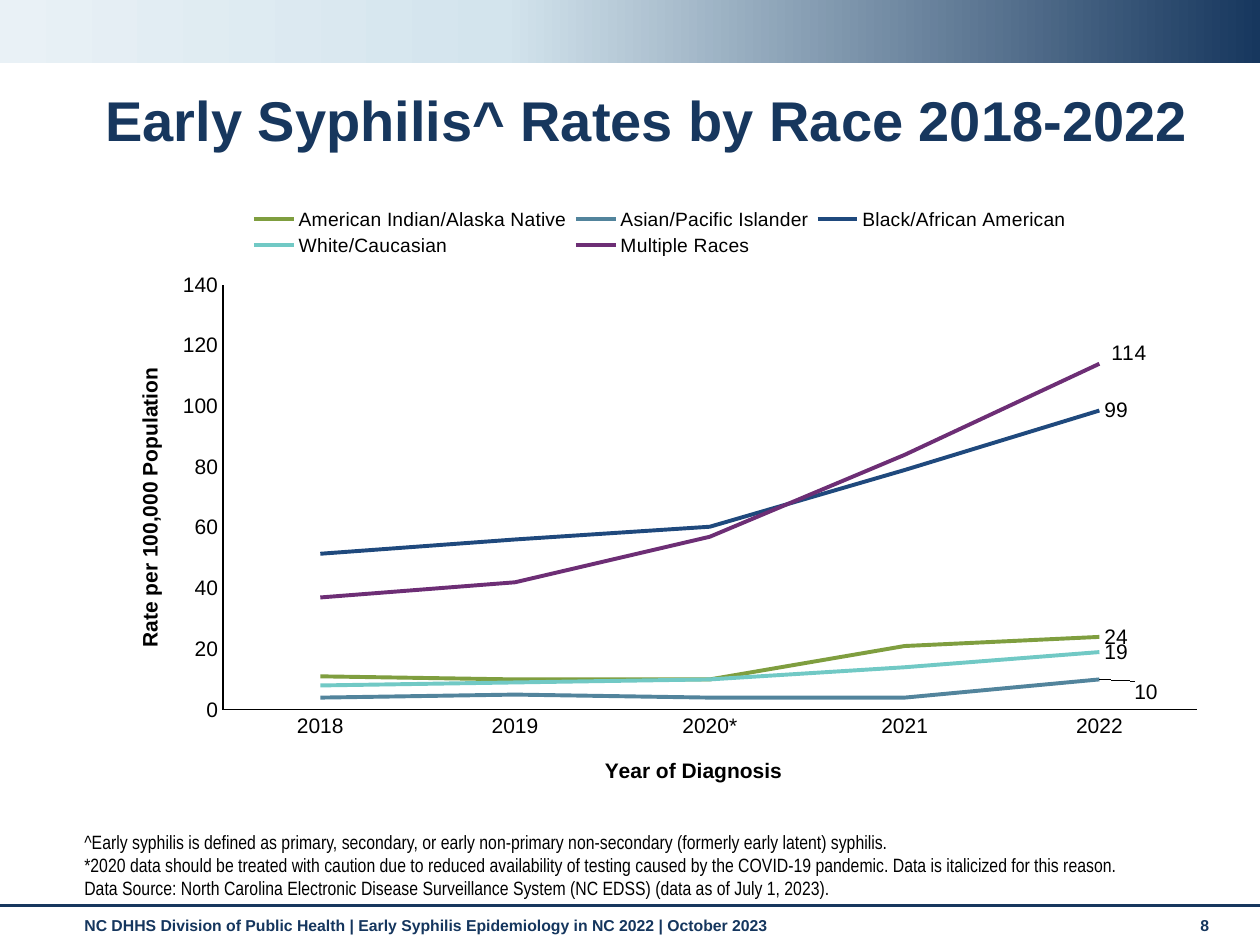
from copy import deepcopy
from dataclasses import dataclass

from lxml.etree import SubElement
from pptx import Presentation
from pptx.chart.data import CategoryChartData
from pptx.dml.color import RGBColor
from pptx.enum.chart import XL_CHART_TYPE, XL_LABEL_POSITION, XL_LEGEND_POSITION, XL_TICK_MARK
from pptx.enum.shapes import MSO_CONNECTOR, MSO_SHAPE
from pptx.enum.text import MSO_ANCHOR
from pptx.oxml import parse_xml
from pptx.oxml.ns import nsdecls, qn
from pptx.util import Emu, Pt


@dataclass(frozen=True)
class Theme:
    """Hold the colours, fonts and type sizes of the slide."""
    navy: str = "17375E"
    foot: str = "15365E"
    black: str = "000000"
    band: tuple = ((0, "17375E"), (0.6, "D3E4ED"), (1, "E9F1F6"))
    font: str = "Arial"
    narrow: str = "Arial Narrow"
    title: int = 32
    axis: int = 12
    legend: int = 11
    note: int = 11
    small: int = 9


THEME = Theme()
YEARS = ("2018", "2019", "2020*", "2021", "2022")
RATES = (
    ("American Indian/Alaska Native", "7F9E3F", (11, 10, 10, 21, 24), None),
    ("Asian/Pacific Islander", "52849C", (4, 5, 4, 4, 10), (30, 13)),
    ("Black/African American", "1F497D", (51.4, 56.1, 60.3, 79, 98.6), None),
    ("White/Caucasian", "71C9C5", (8, 9, 10, 14, 19), None),
    ("Multiple Races", "6D2E75", (37, 42, 57, 84, 114), (7, -10)),
)
NOTES = (
    "^Early syphilis is defined as primary, secondary, or early non-primary non-secondary (formerly early latent) syphilis.",
    "*2020 data should be treated with caution due to reduced availability of testing caused by the COVID-19 pandemic. Data is italicized for this reason.",
    "Data Source: North Carolina Electronic Disease Surveillance System (NC EDSS) (data as of July 1, 2023).",
)


def px(count):
    """Turn px into EMU."""
    return Emu(round(count * 914400 / 126))


def style(item, **values):
    """Set each given attribute on an item."""
    for name, value in values.items():
        setattr(item, name, value)


def ink(font, size, color=THEME.black, bold=False, face=THEME.font):
    """Format a font."""
    style(font, size=Pt(size), bold=bold, name=face)
    font.color.rgb = RGBColor.from_string(color)


def stroke(line, color, width):
    """Format a line."""
    line.color.rgb = RGBColor.from_string(color)
    line.width = Pt(width)


def write(slide, box, lines, anchor=MSO_ANCHOR.TOP, space=None, **look):
    """Write lines of text in a box."""
    frame = slide.shapes.add_textbox(*map(px, box)).text_frame
    style(frame, word_wrap=True, vertical_anchor=anchor, text="\n".join(lines))
    for para in frame.paragraphs:
        para.line_spacing = space
        ink(para.runs[0].font, **look)


def banner(slide, box):
    """Draw the gradient band."""
    band = slide.shapes.add_shape(MSO_SHAPE.RECTANGLE, *map(px, box))
    band.shadow.inherit = False
    band.line.fill.background()
    band.fill.gradient()
    band.fill.gradient_angle = 180
    stops = band._element.xpath(".//a:gsLst")[0]
    stops.append(deepcopy(stops[-1]))
    for stop, (place, color) in zip(band.fill.gradient_stops, THEME.band):
        stop.position = place
        stop.color.rgb = RGBColor.from_string(color)


def footer(slide, box):
    """Draw the rule, the source line and the page number."""
    left, top, width, height = box
    rule = slide.shapes.add_connector(
        MSO_CONNECTOR.STRAIGHT, px(left), px(top), px(left + width), px(top))
    stroke(rule.line, THEME.navy, 1.75)
    SubElement(rule._element.spPr, qn("a:effectLst"))
    look = dict(size=THEME.small, color=THEME.foot, bold=True)
    text = "NC DHHS Division of Public Health | Early Syphilis Epidemiology in NC 2022 | October 2023"
    write(slide, (left + 72, top + 4, 1101, 37), [text], **look)
    write(slide, (left + 1188, top + 4, 56, 37), ["8"], **look)


def layout(node, index, size, spot, edge=True, inner=False):
    """Give a chart part a manual place, in px of the chart."""
    for old in node.findall(qn("c:layout")):
        node.remove(old)
    rows = [("layoutTarget", "inner")] if inner else []
    if edge:
        rows += [("xMode", "edge"), ("yMode", "edge")]
    rows += [(key, round(part / size[i % 2], 4))
             for i, (key, part) in enumerate(zip("xywh", spot))]
    body = "".join(f'<c:{key} val="{value}"/>' for key, value in rows)
    node.insert(index, parse_xml(
        f'<c:layout {nsdecls("c")}><c:manualLayout>{body}</c:manualLayout></c:layout>'))


def axes(chart, size):
    """Format both axes and their titles."""
    parts = (
        (chart.category_axis, "Year of Diagnosis", (498, 561)),
        (chart.value_axis, "Rate per 100,000 Population", (30, 171)),
    )
    for axis, text, spot in parts:
        style(axis, has_major_gridlines=False, major_tick_mark=XL_TICK_MARK.NONE,
              minor_tick_mark=XL_TICK_MARK.NONE)
        ink(axis.tick_labels.font, THEME.axis)
        stroke(axis.format.line, THEME.black, 0.75)
        frame = axis.axis_title.text_frame
        frame.text = text
        ink(frame.paragraphs[0].runs[0].font, THEME.axis, bold=True)
        layout(axis.axis_title._element, 1, size, spot)
    style(chart.value_axis, minimum_scale=0, maximum_scale=140, major_unit=20)
    style(chart.value_axis.tick_labels, number_format="0", number_format_is_linked=False)


def graph(slide, box):
    """Draw the line chart of rates."""
    size = box[2:]
    data = CategoryChartData(number_format="#,##0")
    data.categories = YEARS
    for name, _, values, _ in RATES:
        data.add_series(name, values)
    chart = slide.shapes.add_chart(XL_CHART_TYPE.LINE, *map(px, box), data).chart
    style(chart, has_title=False, has_legend=True)
    ink(chart.font, 10)
    style(chart.legend, position=XL_LEGEND_POSITION.TOP, include_in_layout=False)
    ink(chart.legend.font, THEME.legend)
    layout(chart.legend._element, 1, size, (142, 11, 830, 56))
    plot = chart.plots[0]
    plot.vary_by_categories = False
    axes(chart, size)
    layout(chart._chartSpace.xpath(".//c:plotArea")[0], 0, size,
           (120, 92, 974, 425), inner=True)
    for line, (_, color, _, shift) in zip(plot.series, RATES):
        line.smooth = False
        stroke(line.format.line, color, 2.25)
        label = line.points[len(YEARS) - 1].data_label
        ink(label.font, THEME.axis)
        label.position = XL_LABEL_POSITION.RIGHT
        line.data_labels.show_value = False
        if shift:
            layout(line._element.xpath(".//c:dLbl")[0], 1, size, shift, edge=False)


def main():
    """Build and save the slide."""
    deck = Presentation()
    style(deck, slide_width=px(1260), slide_height=px(945))
    slide = deck.slides.add_slide(deck.slide_layouts[6])
    banner(slide, (0, 0, 1260, 63))
    footer(slide, (0, 906, 1260, 39))
    write(slide, (93, 86, 1126, 75), ["Early Syphilis^ Rates by Race 2018-2022"],
          anchor=MSO_ANCHOR.MIDDLE, space=0.9, size=THEME.title, color=THEME.navy, bold=True)
    write(slide, (72, 861, 1147, 45), NOTES, anchor=MSO_ANCHOR.BOTTOM,
          size=THEME.note, face=THEME.narrow)
    graph(slide, (103, 193, 1115, 612))
    deck.save("out.pptx")


if __name__ == "__main__":
    main()
